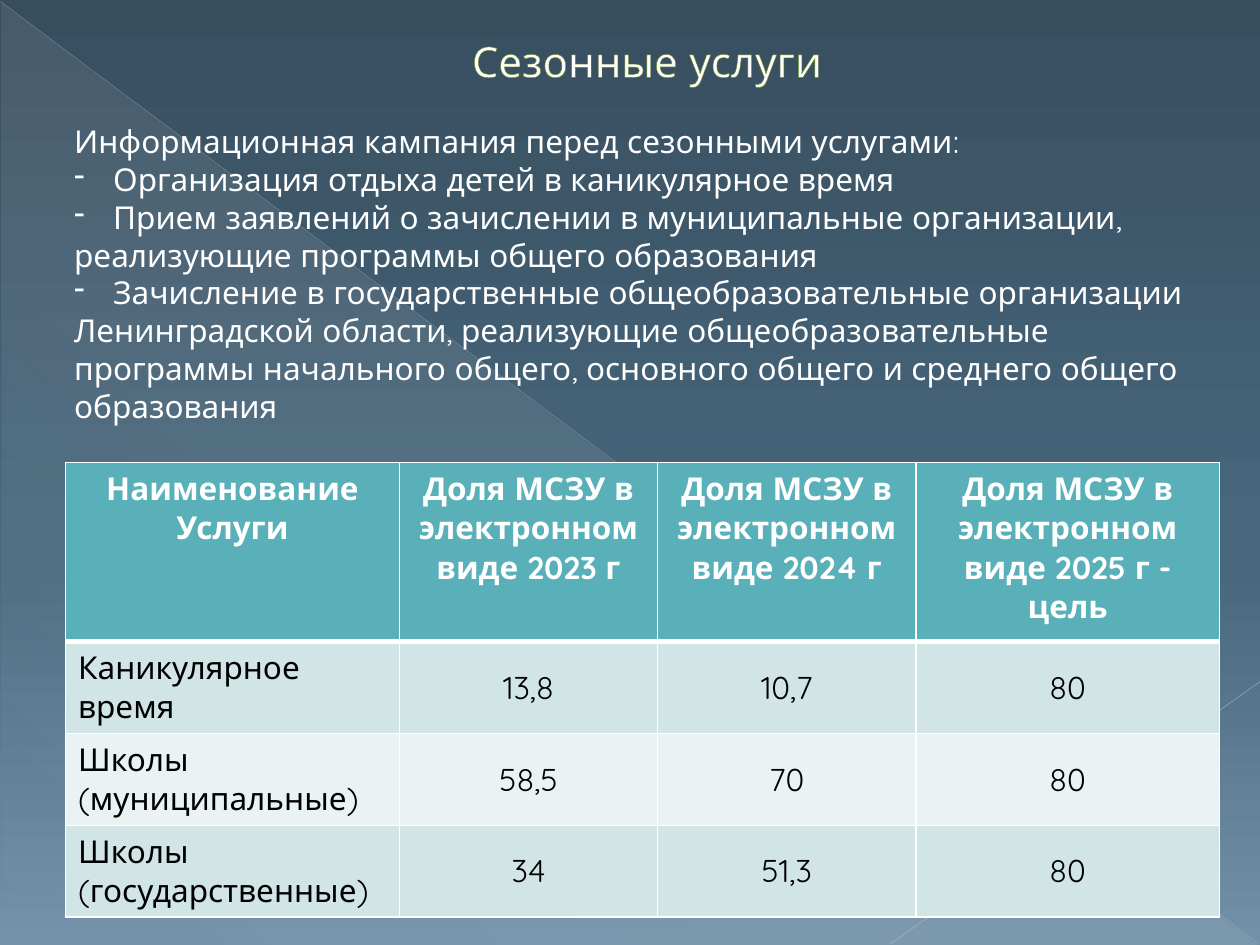
from lxml.etree import SubElement
from pptx import Presentation
from pptx.dml.color import RGBColor
from pptx.enum.shapes import MSO_CONNECTOR, MSO_SHAPE
from pptx.enum.text import MSO_ANCHOR, PP_ALIGN
from pptx.oxml.ns import qn
from pptx.util import Inches, Pt

FONT = "Quicksand"
WHITE, BLACK = "FFFFFF", "000000"
HEADER_FILL = "59B0B9"
BAND_FILLS = ["D1E4E6", "EAF2F3"]

BACKGROUND = [(0, "374E5F", 100), (60, "49687E", 100), (100, "7291A8", 100)]
SHEEN = [(0, "E7ECED", 10), (70, "E7ECED", 8), (100, "E7ECED", 1)]
RAYS = [
    ((0, 0.01), (9.99, 7.49), "BAC0C6", 0.39, 35),
    ((10, 5.41), (7.07, 7.49), "C2C7CC", 0.47, 45),
]

TITLE = "Сезонные услуги"
CAMPAIGN = [
    (False, "Информационная кампания перед сезонными услугами:"),
    (True, "Организация отдыха детей в каникулярное время"),
    (True, "Прием заявлений о зачислении в муниципальные организации,"),
    (False, "реализующие программы общего образования"),
    (True, "Зачисление в государственные общеобразовательные организации"),
    (False, "Ленинградской области, реализующие общеобразовательные программы "
            "начального общего, основного общего и среднего общего образования"),
]
SHARES = [
    ("Наименование Услуги", "Доля МСЗУ в электронном виде 2023 г",
     "Доля МСЗУ в электронном виде 2024 г", "Доля МСЗУ в электронном виде 2025 г - цель"),
    ("Каникулярное время", "13,8", "10,7", "80"),
    ("Школы (муниципальные)", "58,5", "70", "80"),
    ("Школы (государственные)", "34", "51,3", "80"),
]
COLUMN_WIDTHS = [2.65, 2.05, 2.05, 2.41]
ROW_HEIGHTS = [1.42, 0.73, 0.73, 0.73]


def color(value):
    return RGBColor.from_string(value)


def add_color(parent, value, alpha=100):
    tint = SubElement(parent, qn("a:srgbClr"), val=value)
    if alpha < 100:
        SubElement(tint, qn("a:alpha"), val=str(alpha * 1000))


def add_outline(properties, tag, width, value, index=0):
    outline = SubElement(properties, qn(tag), w=str(Pt(width)))
    add_color(SubElement(outline, qn("a:solidFill")), value)
    properties.insert(index, outline)


def paint_gradient(fill, owner, stops, angle):
    fill.gradient()
    gradient = owner.xpath(".//a:gradFill")[0]
    for child in list(gradient):
        gradient.remove(child)
    stop_list = SubElement(gradient, qn("a:gsLst"))
    for position, value, alpha in stops:
        add_color(SubElement(stop_list, qn("a:gs"), pos=str(position * 1000)), value, alpha)
    SubElement(gradient, qn("a:lin"), ang=str(angle * 60000), scaled="0")


def style(paragraph, size, value, bold=False):
    for run in paragraph.runs:
        run.font.name = FONT
        run.font.size = Pt(size)
        run.font.bold = bold
        run.font.color.rgb = color(value)


def indent(paragraph, left, first):
    properties = paragraph._p.get_or_add_pPr()
    properties.set("marL", str(Inches(left)))
    properties.set("indent", str(Inches(first)))
    return properties


def add_backdrop(slide):
    paint_gradient(slide.background.fill, slide._element, BACKGROUND, 90)
    sheen = slide.shapes.add_shape(
        MSO_SHAPE.RIGHT_TRIANGLE, Inches(0.01), Inches(0.02), Inches(9.98), Inches(7.48))
    sheen.shadow.inherit = False
    sheen.line.fill.background()
    paint_gradient(sheen.fill, sheen._element, SHEEN, 133)
    for start, end, value, width, alpha in RAYS:
        ray = slide.shapes.add_connector(
            MSO_CONNECTOR.STRAIGHT, *(Inches(v) for v in start + end))
        ray.line.width = Pt(width)
        ray.line.color.rgb = color(value)
        tint = ray._element.spPr.xpath(".//a:srgbClr")[0]
        SubElement(tint, qn("a:alpha"), val=str(alpha * 1000))
        SubElement(ray._element.spPr, qn("a:effectLst"))


def add_title(slide):
    title = slide.shapes.add_textbox(Inches(0.12), Inches(0.04), Inches(9.5), Inches(0.88))
    frame = title.text_frame
    frame.word_wrap = True
    frame.vertical_anchor = MSO_ANCHOR.MIDDLE
    frame.text = TITLE
    heading = frame.paragraphs[0]
    heading.alignment = PP_ALIGN.CENTER
    style(heading, 24, WHITE)
    indent(heading, 0.53, 0)
    add_outline(heading.runs[0]._r.get_or_add_rPr(), "a:ln", 0.5, "698A18")


def add_campaign(slide):
    campaign = slide.shapes.add_textbox(Inches(0.49), Inches(0.92), Inches(9.31), Inches(2.52))
    frame = campaign.text_frame
    frame.word_wrap = True
    frame.text = "\n".join(text for _, text in CAMPAIGN)
    for paragraph, (bulleted, _) in zip(frame.paragraphs, CAMPAIGN):
        style(paragraph, 18, WHITE)
        if bulleted:
            SubElement(indent(paragraph, 0.31, -0.31), qn("a:buChar"), char="-")


def add_borders(cell, widths):
    properties = cell._tc.get_or_add_tcPr()
    for index, (side, width) in enumerate(widths.items()):
        add_outline(properties, f"a:ln{side}", width, WHITE, index)


def add_shares(slide):
    table = slide.shapes.add_table(
        len(SHARES), len(COLUMN_WIDTHS), Inches(0.52), Inches(3.67),
        Inches(sum(COLUMN_WIDTHS)), Inches(sum(ROW_HEIGHTS))).table
    for column, width in zip(table.columns, COLUMN_WIDTHS):
        column.width = Inches(width)
    for r, (row, height, values) in enumerate(zip(table.rows, ROW_HEIGHTS, SHARES)):
        row.height = Inches(height)
        header = r == 0
        for c, (cell, value) in enumerate(zip(row.cells, values)):
            cell.text_frame.text = value
            paragraph = cell.text_frame.paragraphs[0]
            style(paragraph, 18, WHITE if header else BLACK, header)
            if header or c > 0:
                paragraph.alignment = PP_ALIGN.CENTER
            if not header and c > 0:
                cell.vertical_anchor = MSO_ANCHOR.MIDDLE
            cell.fill.solid()
            cell.fill.fore_color.rgb = color(HEADER_FILL if header else BAND_FILLS[(r - 1) % 2])
            add_borders(cell, {"L": 1, "R": 1, "T": 3 if r == 1 else 1, "B": 3 if header else 1})


def main():
    deck = Presentation()
    deck.slide_width, deck.slide_height = Inches(10), Inches(7.5)
    slide = deck.slides.add_slide(deck.slide_layouts[6])
    add_backdrop(slide)
    add_title(slide)
    add_shares(slide)
    add_campaign(slide)
    deck.save("out.pptx")


if __name__ == "__main__":
    main()
